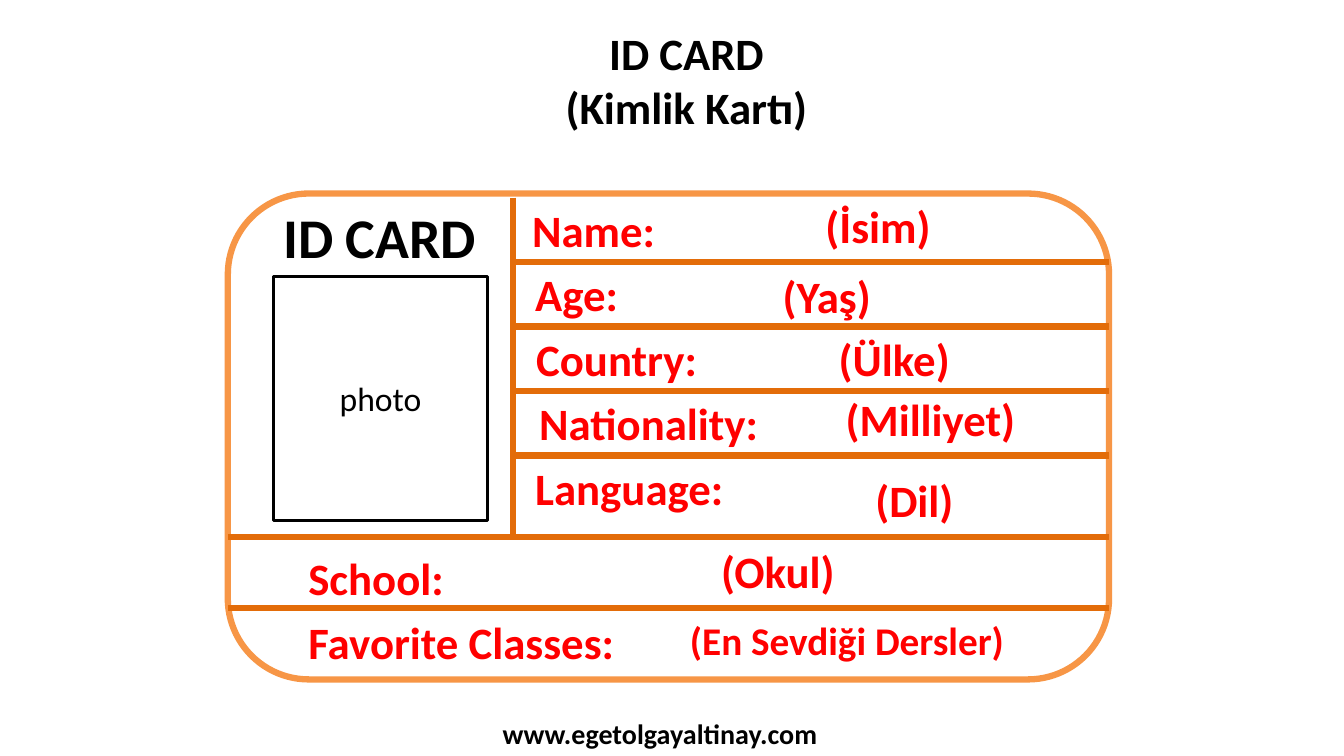
"""Build a bilingual ID card slide with labelled rows and a photo frame."""
import pptx
import pptx.util
import pptx.dml.color
import pptx.enum.shapes
import pptx.enum.text
import pptx.oxml.ns
from lxml import etree

Inches = pptx.util.Inches
Align = pptx.enum.text.PP_ALIGN
Anchor = pptx.enum.text.MSO_ANCHOR
Shape = pptx.enum.shapes.MSO_SHAPE

FONT = "Calibri"
BLACK, RED, WHITE = "000000", "FF0000", "FFFFFF"
BORDER, RULE = "F79646", "E36C09"

TITLE = ["ID CARD", "(Kimlik Kartı)"]
HEADING = "ID CARD"
PHOTO = "photo"
WEBSITE = "www.egetolgayaltinay.com"

LABELS = [
    ("Name:", 5.18, 2.13),
    ("Age:", 5.21, 2.13),
    ("Country:", 5.22, 2.13),
    ("Nationality:", 5.25, 3),
    ("Language:", 5.21, 3),
]
WIDE_LABELS = [("School:", 3), ("Favorite Classes:", 4.02)]
TRANSLATIONS = [
    ("(İsim)", 6.98, 1.92, 3.46, 32),
    ("(Yaş)", 6.47, 2.62, 3.46, 32),
    ("(Ülke)", 7.14, 3.24, 3.46, 32),
    ("(Milliyet)", 7.5, 3.84, 3.46, 32),
    ("(Dil)", 7.14, 4.64, 3.86, 32),
    ("(Okul)", 4.62, 5.34, 6.19, 32),
    ("(En Sevdiği Dersler)", 6.35, 6.07, 4.1, 28),
]

CARD_LEFT, CARD_TOP, CARD_WIDTH, CARD_HEIGHT = 2.26, 1.92, 8.74, 4.82
CARD_RIGHT = CARD_LEFT + CARD_WIDTH
DIVIDER = 5.09
ROW_TOP, ROW_HEIGHT = 1.96, 0.64
WIDE_TOP = 5.41
FULL_RULES = [5.33, 6.03]
PHOTO_LEFT, PHOTO_WIDTH = 2.71, 2.13


def color(value):
    return pptx.dml.color.RGBColor.from_string(value)


def write(shape, lines, size, ink, bold=True, align=Align.CENTER, anchor=Anchor.TOP):
    frame = shape.text_frame
    frame.word_wrap = True
    frame.vertical_anchor = anchor
    frame.text = "\n".join(lines)
    for paragraph in frame.paragraphs:
        paragraph.alignment = align
        font = paragraph.font
        font.name, font.size, font.bold = FONT, pptx.util.Pt(size), bold
        font.color.rgb = color(ink)


def add_text(slide, text, left, top, width, size=32, ink=RED, align=Align.LEFT):
    box = slide.shapes.add_textbox(
        Inches(left), Inches(top), Inches(width), Inches(size / 50))
    write(box, [text], size, ink, align=align)


def add_frame(slide, kind, left, top, width, height, line, weight):
    shape = slide.shapes.add_shape(
        kind, Inches(left), Inches(top), Inches(width), Inches(height))
    shape.shadow.inherit = False
    shape.fill.solid()
    shape.fill.fore_color.rgb = color(WHITE)
    shape.line.color.rgb = color(line)
    shape.line.width = pptx.util.Pt(weight)
    return shape


def add_rule(slide, x1, y1, x2, y2):
    rule = slide.shapes.add_connector(
        pptx.enum.shapes.MSO_CONNECTOR.STRAIGHT,
        Inches(x1), Inches(y1), Inches(x2), Inches(y2))
    rule.line.color.rgb = color(RULE)
    rule.line.width = pptx.util.Pt(4.5)
    properties = rule.element.find(pptx.oxml.ns.qn("p:spPr"))
    etree.SubElement(properties, pptx.oxml.ns.qn("a:effectLst"))


def main():
    presentation = pptx.Presentation()
    presentation.slide_width, presentation.slide_height = Inches(13.33), Inches(7.5)
    slide = presentation.slides.add_slide(presentation.slide_layouts[5])

    title = slide.shapes.title
    title.left, title.top = Inches(2.81), Inches(0.21)
    title.width, title.height = Inches(8), Inches(1.18)
    write(title, TITLE, 32, BLACK)

    add_frame(slide, Shape.ROUNDED_RECTANGLE, CARD_LEFT, CARD_TOP,
              CARD_WIDTH, CARD_HEIGHT, BORDER, 4.5)
    add_text(slide, HEADING, PHOTO_LEFT, ROW_TOP, PHOTO_WIDTH, 40, BLACK)

    for row, (label, left, width) in enumerate(LABELS):
        add_text(slide, label, left, ROW_TOP + row * ROW_HEIGHT, width)
    for row, (label, width) in enumerate(WIDE_LABELS):
        add_text(slide, label, 2.96, WIDE_TOP + row * ROW_HEIGHT, width)

    add_rule(slide, DIVIDER, ROW_TOP, DIVIDER, FULL_RULES[0])
    for row in range(1, len(LABELS)):
        y = ROW_TOP + row * ROW_HEIGHT
        add_rule(slide, DIVIDER, y, CARD_RIGHT, y)
    for y in FULL_RULES:
        add_rule(slide, CARD_LEFT, y, CARD_RIGHT, y)

    for text, left, top, width, size in TRANSLATIONS:
        add_text(slide, text, left, top, width, size, align=Align.CENTER)

    photo = add_frame(slide, Shape.RECTANGLE, PHOTO_LEFT, 2.74,
                      PHOTO_WIDTH, 2.42, BLACK, 2)
    write(photo, [PHOTO], 24, BLACK, bold=False, anchor=Anchor.MIDDLE)
    add_text(slide, WEBSITE, 4.46, 7.06, 4.17, 20, BLACK, Align.CENTER)

    presentation.save("out.pptx")


if __name__ == "__main__":
    main()
